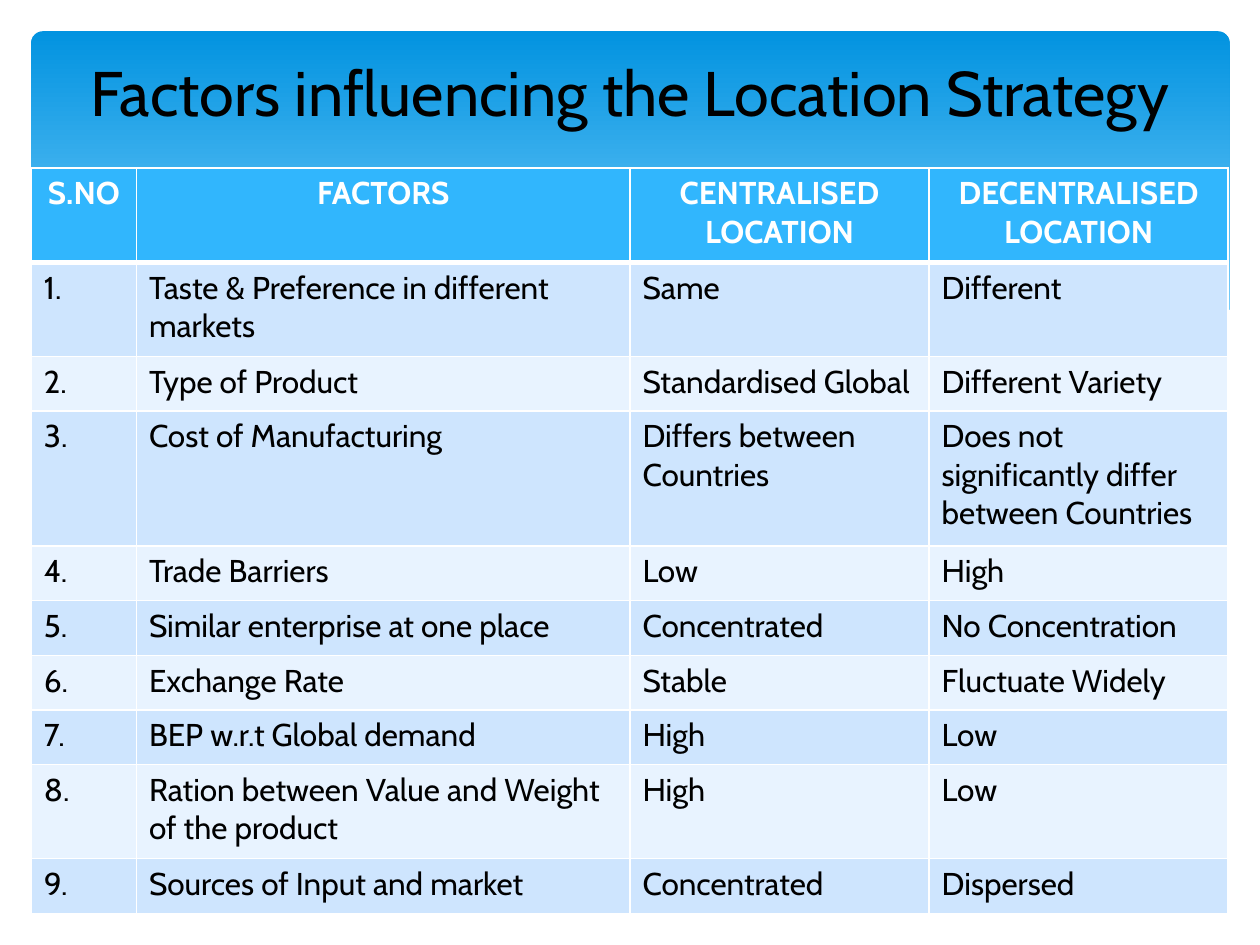
import lxml.etree
import pptx
import pptx.dml.color
import pptx.enum.shapes
import pptx.enum.text
import pptx.oxml.ns
import pptx.util

Cm = pptx.util.Cm
FONT = "Cabin"
WHITE, BLACK = "FFFFFF", "000000"
HEADER_BLUE, ODD_BLUE, EVEN_BLUE = "31B6FD", "CEE5FE", "E8F3FF"
COLUMN_WIDTHS = (2.12, 9.95, 6.03, 6.03)
LINE_HEIGHTS = {1: 1.1, 2: 1.9, 3: 2.72}
HEADINGS = ("S.NO", "FACTORS", "CENTRALISED LOCATION", "DECENTRALISED LOCATION")
FACTORS = (
    ("Taste & Preference in different markets", "Same", "Different", 2),
    ("Type of Product", "Standardised Global", "Different Variety", 1),
    ("Cost of Manufacturing", "Differs between Countries",
     "Does not significantly differ between Countries", 3),
    ("Trade Barriers", "Low", "High", 1),
    ("Similar enterprise at one place", "Concentrated", "No Concentration", 1),
    ("Exchange Rate", "Stable", "Fluctuate Widely", 1),
    ("BEP w.r.t Global demand", "High", "Low", 1),
    ("Ration between Value and Weight of the product", "High", "Low", 2),
    ("Sources of Input and market", "Concentrated", "Dispersed", 1),
)
WAVE = ((0, 0.74), (1.12, 0.3), (2.44, 0.08), (4.06, 0), (5.77, 0.05),
        (7.44, 0.25), (9.32, 0.58), (11.48, 1.09), (13.51, 1.52),
        (15.88, 1.98), (18.31, 2.29), (20.07, 2.36), (21.64, 2.26),
        (23.29, 1.9), (24.23, 1.57), (24.23, 3.68), (0, 3.68))


def color(value):
    """Return the colour for a hex string."""
    return pptx.dml.color.RGBColor.from_string(value)


def style_text(frame, size, shade, bold=False, centred=False):
    """Set one font on every paragraph of a text frame."""
    for paragraph in frame.paragraphs:
        paragraph.font.name = FONT
        paragraph.font.size = pptx.util.Pt(size)
        paragraph.font.bold = bold
        paragraph.font.color.rgb = color(shade)
        if centred:
            paragraph.alignment = pptx.enum.text.PP_ALIGN.CENTER


def add_banner(slide, left, top, width, height):
    """Draw the rounded gradient banner with the white wave over its foot."""
    banner = slide.shapes.add_shape(
        pptx.enum.shapes.MSO_SHAPE.ROUNDED_RECTANGLE,
        Cm(left), Cm(top), Cm(width), Cm(height))
    banner.adjustments[0] = 0.034
    banner.shadow.inherit = False
    banner.line.fill.background()
    banner.fill.gradient()
    banner.fill.gradient_angle = 270
    stops = ((0, "0293E0"), (0.9, "83D3FE"))
    for stop, (position, shade) in zip(banner.fill.gradient_stops, stops):
        stop.position = position
        stop.color.rgb = color(shade)

    points = [(Cm(left - 0.05 + x), Cm(top + 4.04 + y)) for x, y in WAVE]
    builder = slide.shapes.build_freeform(*points[0])
    builder.add_line_segments(points[1:], close=True)
    wave = builder.convert_to_shape()
    wave.shadow.inherit = False
    wave.fill.solid()
    wave.fill.fore_color.rgb = color(WHITE)
    wave.line.fill.background()


def add_title(slide, left, top, width, height):
    """Place the centred slide title."""
    title = slide.shapes.add_textbox(Cm(left), Cm(top), Cm(width), Cm(height))
    frame = title.text_frame
    frame.word_wrap = True
    frame.vertical_anchor = pptx.enum.text.MSO_ANCHOR.MIDDLE
    frame.text = "Factors influencing the Location Strategy"
    style_text(frame, 36, BLACK, centred=True)


def add_borders(cell, bottom):
    """Give a cell white borders, with its own bottom weight in points."""
    properties = cell._tc.get_or_add_tcPr()
    sides = (("a:lnL", 1), ("a:lnR", 1), ("a:lnT", 1), ("a:lnB", bottom))
    for index, (side, weight) in enumerate(sides):
        border = lxml.etree.Element(
            pptx.oxml.ns.qn(side), w=str(pptx.util.Pt(weight)))
        fill = lxml.etree.SubElement(border, pptx.oxml.ns.qn("a:solidFill"))
        lxml.etree.SubElement(fill, pptx.oxml.ns.qn("a:srgbClr"), val=WHITE)
        properties.insert(index, border)


def add_factor_table(slide, left, top, width):
    """Build the table comparing centralised and decentralised locations."""
    rows = [(HEADINGS, 2)]
    for number, (*texts, lines) in enumerate(FACTORS, 1):
        rows.append(((f"{number}.", *texts), lines))
    heights = [LINE_HEIGHTS[lines] for _, lines in rows]
    table = slide.shapes.add_table(
        len(rows), len(HEADINGS), Cm(left), Cm(top),
        Cm(width), Cm(sum(heights))).table
    for column, column_width in zip(table.columns, COLUMN_WIDTHS):
        column.width = Cm(column_width)
    for index, (texts, _) in enumerate(rows):
        table.rows[index].height = Cm(heights[index])
        heading = index == 0
        band = HEADER_BLUE if heading else (EVEN_BLUE, ODD_BLUE)[index % 2]
        for cell, text in zip(table.rows[index].cells, texts):
            cell.text = text
            style_text(cell.text_frame, 18, WHITE if heading else BLACK,
                       heading, heading)
            cell.fill.solid()
            cell.fill.fore_color.rgb = color(band)
            add_borders(cell, 3 if heading else 1)


def main():
    """Build the slide and save it."""
    deck = pptx.Presentation()
    deck.slide_width, deck.slide_height = Cm(25.4), Cm(19.05)
    slide = deck.slides.add_slide(deck.slide_layouts[6])
    add_banner(slide, 0.63, 0.63, 24.16, 6.86)
    add_factor_table(slide, 0.63, 3.39, sum(COLUMN_WIDTHS))
    add_title(slide, 1.27, 0.94, 22.86, 1.8)
    deck.save("out.pptx")


if __name__ == "__main__":
    main()
